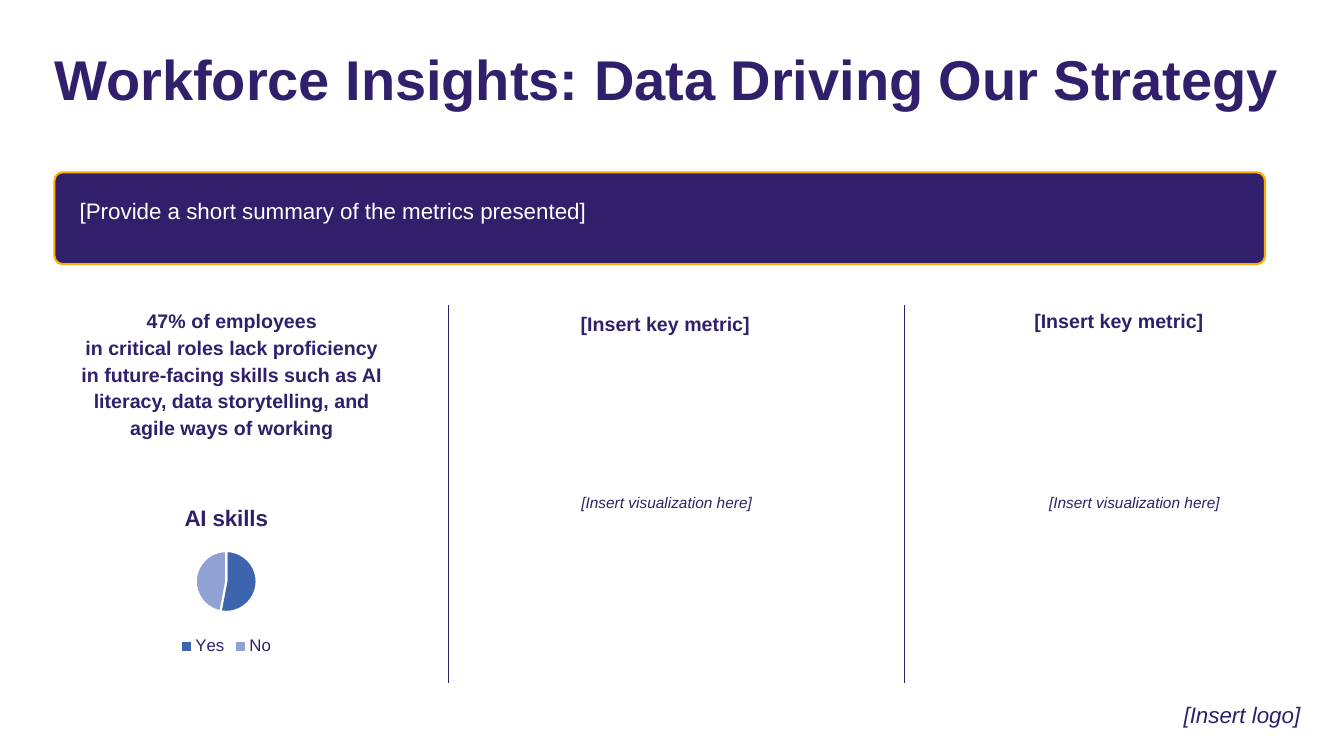
from dataclasses import dataclass, field

from lxml.etree import SubElement
from pptx import Presentation
from pptx.chart.data import CategoryChartData
from pptx.dml.color import RGBColor
from pptx.enum.chart import XL_CHART_TYPE, XL_LEGEND_POSITION
from pptx.enum.shapes import MSO_CONNECTOR, MSO_SHAPE
from pptx.enum.text import PP_ALIGN
from pptx.oxml.ns import qn
from pptx.slide import Slide
from pptx.text.text import Font
from pptx.util import Pt

COLORS = {
    "indigo": "30206B",
    "divider": "31216B",
    "amber": "FFAB00",
    "white": "FFFFFF",
    "yes": "3C65AE",
    "no": "90A2D3",
}

HEADING = {"size": Pt(40), "bold": True}
SUMMARY = {"size": Pt(16), "color": "white"}
METRIC = {"size": Pt(14), "bold": True}
HINT = {"size": Pt(11), "italic": True}
LOGO = {"size": Pt(16), "italic": True}
CHART_TITLE = {"size": Pt(16), "bold": True}
LEGEND = {"size": Pt(12)}


@dataclass
class Label:
    """A text box; lengths in points."""
    paragraphs: list[str]
    left: float
    top: float
    width: float
    height: float
    style: dict
    align: PP_ALIGN = PP_ALIGN.CENTER
    spacing: float = 1.14
    insets: dict = field(default_factory=dict)


LABELS = [
    Label(["Workforce Insights: Data Driving Our Strategy"],
          38.9, 37.4, 883.4, 47.5, HEADING, PP_ALIGN.LEFT, 0.9),
    Label(["[Provide a short summary of the metrics presented]"],
          56.9, 138.2, 822.2, 36, SUMMARY, PP_ALIGN.LEFT),
    Label(["47% of employees",
           "in critical roles lack proficiency in future-facing skills "
           "such as AI literacy, data storytelling, and agile ways of working"],
          57.6, 218.2, 216, 65.5, METRIC),
    Label(["[Insert key metric]"], 383.8, 220.3, 182.9, 65.5, METRIC),
    Label(["[Insert key metric]"], 707.8, 218.2, 182.9, 65.5, METRIC),
    Label(["[Insert visualization here]"], 399.6, 350.6, 153.4, 65.5, HINT),
    Label(["[Insert visualization here]"], 733.7, 350.6, 153.4, 65.5, HINT),
    Label(["[Insert logo]"], 837.4, 483.8, 110.9, 40, LOGO, spacing=0.9,
          insets={"margin_top": Pt(21.6), "margin_right": Pt(11.4)}),
]
DIVIDERS = [320.4, 645.8]


def rgb(name: str) -> RGBColor:
    return RGBColor.from_string(COLORS[name])


def set_font(font: Font, style: dict) -> None:
    values = {"name": "Arial", "color": "indigo"} | style
    font.color.rgb = rgb(values.pop("color"))
    for name, value in values.items():
        setattr(font, name, value)


def add_label(s: Slide, label: Label) -> None:
    box = (label.left, label.top, label.width, label.height)
    tf = s.shapes.add_textbox(*map(Pt, box)).text_frame
    tf.word_wrap = True
    margins = dict.fromkeys(
        ["margin_left", "margin_top", "margin_right", "margin_bottom"], 0)
    for name, value in (margins | label.insets).items():
        setattr(tf, name, value)
    for i, text in enumerate(label.paragraphs):
        p = tf.add_paragraph() if i else tf.paragraphs[0]
        p.alignment = label.align
        p.line_spacing = label.spacing
        r = p.add_run()
        r.text = text
        set_font(r.font, label.style)


def add_banner(s: Slide) -> None:
    sp = s.shapes.add_shape(MSO_SHAPE.ROUNDED_RECTANGLE,
                            Pt(38.9), Pt(123.1), Pt(864.7), Pt(65.5))
    sp.adjustments[0] = 0.09
    sp.shadow.inherit = False
    sp.fill.solid()
    sp.fill.fore_color.rgb = rgb("indigo")
    sp.line.color.rgb = rgb("amber")
    sp.line.width = Pt(1.5)


def add_divider(s: Slide, x: float) -> None:
    line = s.shapes.add_connector(MSO_CONNECTOR.STRAIGHT,
                                  Pt(x), Pt(218.2), Pt(x), Pt(488.2))
    line.line.color.rgb = rgb("divider")
    line.line.width = Pt(0.75)
    SubElement(line._element.spPr, qn("a:effectLst"))


def add_skills_pie(s: Slide) -> None:
    data = CategoryChartData()
    data.categories = ["Yes", "No"]
    data.add_series("AI skills", [53, 47])
    chart = s.shapes.add_chart(XL_CHART_TYPE.PIE, Pt(72.7), Pt(350.6),
                               Pt(177.8), Pt(120.2), data).chart
    chart.font.name = "Calibri"
    chart.font.size = Pt(10)

    chart.has_title = True
    r = chart.chart_title.text_frame.paragraphs[0].add_run()
    r.text = "AI skills"
    set_font(r.font, CHART_TITLE)
    chart.chart_title.include_in_layout = False

    chart.has_legend = True
    chart.legend.position = XL_LEGEND_POSITION.BOTTOM
    chart.legend.include_in_layout = False
    set_font(chart.legend.font, LEGEND)

    plot = chart.plots[0]
    plot.vary_by_categories = True
    for i, color in enumerate(["yes", "no"]):
        fmt = plot.series[0].points[i].format
        fmt.fill.solid()
        fmt.fill.fore_color.rgb = rgb(color)
        fmt.line.color.rgb = rgb("white")
        fmt.line.width = Pt(1.5)


def main() -> None:
    prs = Presentation()
    prs.slide_width, prs.slide_height = Pt(960), Pt(540)
    s = prs.slides.add_slide(prs.slide_layouts[6])
    add_banner(s)
    for x in DIVIDERS:
        add_divider(s, x)
    for label in LABELS:
        add_label(s, label)
    add_skills_pie(s)
    prs.save("out.pptx")


if __name__ == "__main__":
    main()
